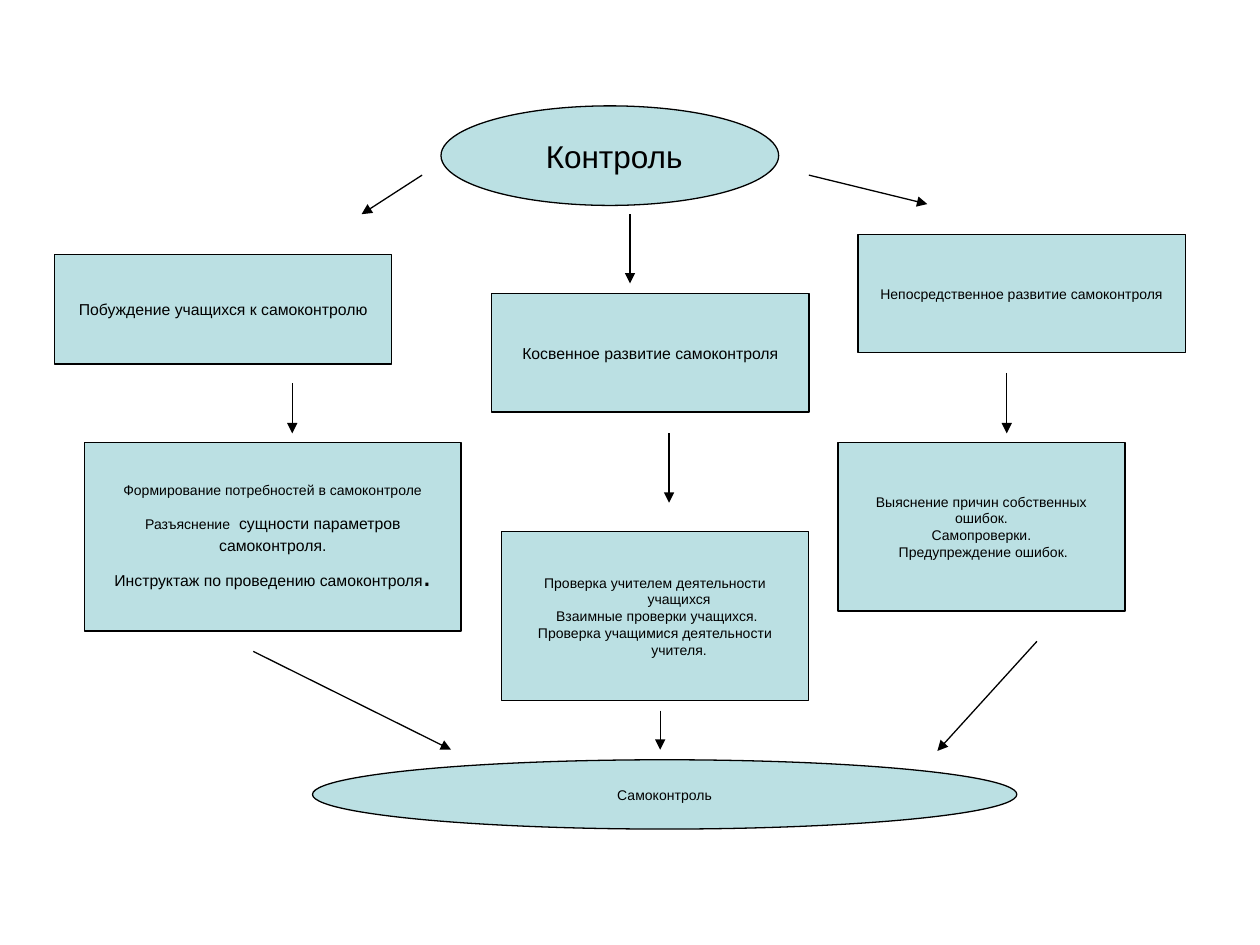
"""Build a slide with a flow chart that leads from control to self-control."""
from lxml import etree
from pptx import Presentation
from pptx.dml.color import RGBColor
from pptx.enum.shapes import MSO_CONNECTOR, MSO_SHAPE
from pptx.enum.text import MSO_ANCHOR, PP_ALIGN
from pptx.oxml.ns import qn
from pptx.util import Inches, Pt

OVAL, RECT = MSO_SHAPE.OVAL, MSO_SHAPE.RECTANGLE
LINE = MSO_CONNECTOR.STRAIGHT
MIDDLE, CENTER = MSO_ANCHOR.MIDDLE, PP_ALIGN.CENTER
COLORS = {"fill": "BBE0E3", "ink": "000000"}
INK = RGBColor.from_string(COLORS["ink"])
FONT = "Arial"
STROKE = Pt(0.75)


def write(par, text, size=8, hang=0):
    par.alignment = CENTER
    if hang:
        props = par._p.get_or_add_pPr()
        props.set("marL", str(Inches(hang)))
        props.set("indent", str(-Inches(hang)))
    run = par.add_run()
    run.text = text
    run.font.size = Pt(size)
    run.font.name = FONT
    run.font.color.rgb = INK


prs = Presentation()
prs.slide_width, prs.slide_height = Inches(10), Inches(7.5)
slide = prs.slides.add_slide(prs.slide_layouts[6])

boxes = [
    (OVAL, (3.5, 0.84, 2.68, 0.79), 0, [[(" Контроль", 18)]]),
    (RECT, (0.43, 2.02, 2.68, 0.87), 0, [[("Побуждение учащихся к самоконтролю", 9)]]),
    (RECT, (3.9, 2.33, 2.52, 0.94), 0, [[("Косвенное развитие самоконтроля", 9)]]),
    (RECT, (6.81, 1.86, 2.6, 0.94), 0, [[("Непосредственное развитие самоконтроля", 8)]]),
    (RECT, (0.67, 3.51, 2.99, 1.5), 0, [
        [("Формирование потребностей в самоконтроле", 8)],
        [("Разъяснение", 8), (" ", 18), ("сущности параметров самоконтроля.", 9)],
        [("Инструктаж по проведению самоконтроля", 9), (".", 18)],
    ]),
    (RECT, (3.98, 4.22, 2.44, 1.34), 0.38, [
        [("Проверка учителем деятельности учащихся", 8)],
        [(" Взаимные проверки учащихся.", 8)],
        [("Проверка учащимися деятельности учителя.", 8)],
    ]),
    (RECT, (6.65, 3.51, 2.28, 1.34), 0, [
        [("Выяснение причин собственных ошибок.", 8)],
        [("Самопроверки.", 8)],
        [(" Предупреждение ошибок.", 8)],
    ]),
    (OVAL, (2.48, 6.03, 5.59, 0.55), 0, [[("Самоконтроль", 8)]]),
]
for kind, place, hang, lines in boxes:
    box = slide.shapes.add_shape(kind, *map(Inches, place))
    box.shadow.inherit = False
    box.fill.solid()
    box.fill.fore_color.rgb = RGBColor.from_string(COLORS["fill"])
    box.line.color.rgb = INK
    box.line.width = STROKE
    frame = box.text_frame
    frame.word_wrap = True
    frame.vertical_anchor = MIDDLE
    for row, parts in enumerate(lines):
        par = frame.add_paragraph() if row else frame.paragraphs[0]
        for text, size in parts:
            write(par, text, size=size, hang=hang)

arrows = [
    (3.35, 1.39, 2.87, 1.7),
    (5, 1.7, 5, 2.25),
    (6.42, 1.39, 7.36, 1.62),
    (2.32, 3.04, 2.32, 3.44),
    (5.31, 3.44, 5.31, 3.99),
    (7.99, 2.96, 7.99, 3.44),
    (2.01, 5.17, 3.58, 5.95),
    (5.24, 5.64, 5.24, 5.95),
    (8.23, 5.09, 7.44, 5.96),
]
for ends in arrows:
    arrow = slide.shapes.add_connector(LINE, *map(Inches, ends))
    arrow.line.color.rgb = INK
    arrow.line.width = STROKE
    props = arrow._element.spPr
    etree.SubElement(props.find(qn("a:ln")), qn("a:tailEnd"), type="triangle")
    etree.SubElement(props, qn("a:effectLst"))

prs.save("out.pptx")
